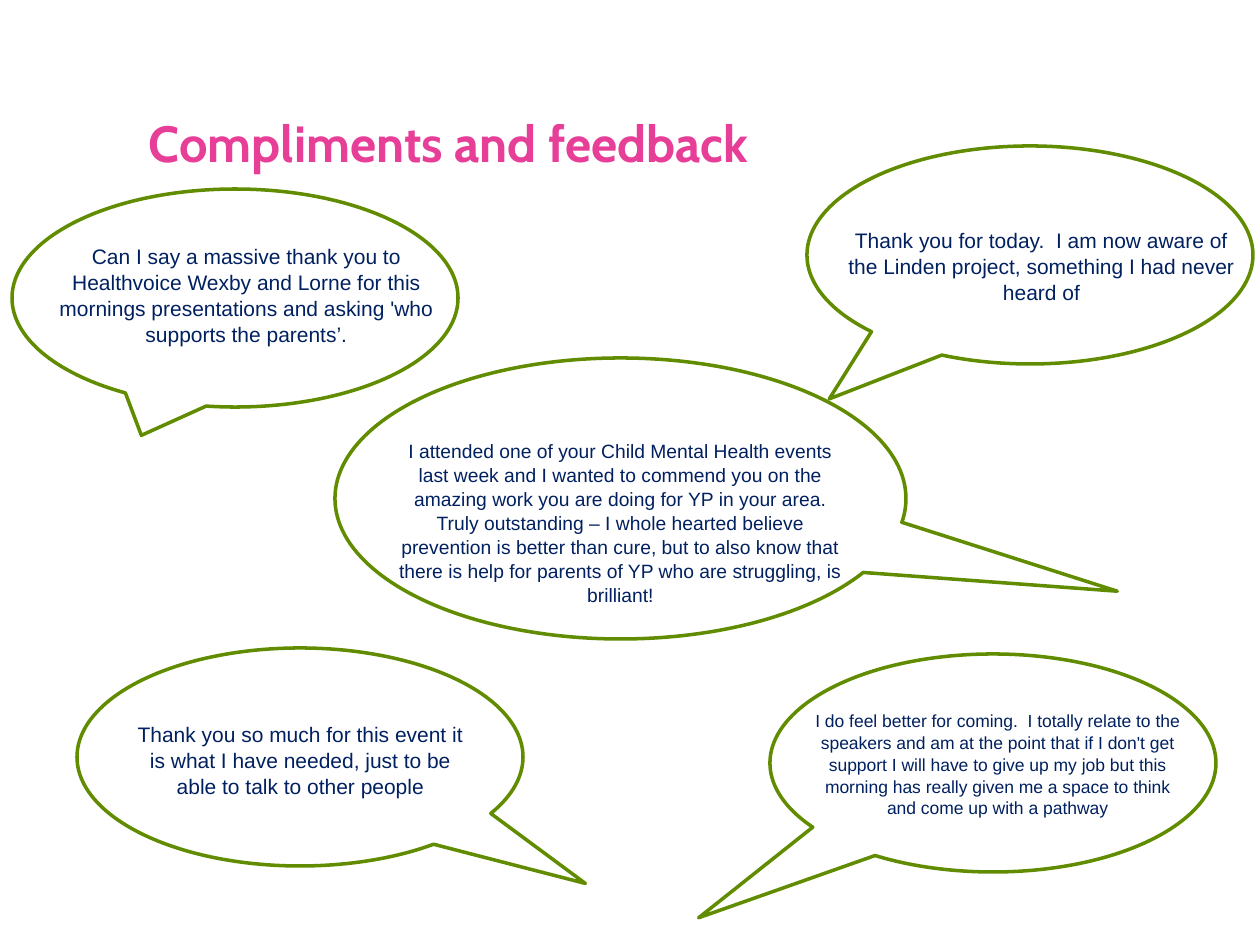
from pptx import Presentation
from pptx import util as u
from pptx.dml.color import RGBColor
from pptx.enum import shapes, text

SCALE = u.Inches(1) / 126
GREEN, NAVY, PINK = "628C00", "002060", "E73E97"
SMALL = (446, 218)
LARGE = (571, 281)

# Each entry: bubble corner, bubble size, pointer, text area, font size, words
BUBBLES = [
    ((77, 648), SMALL, (0.64, 0.58), (117, 714, 367, 127), 12,
     "Thank you so much for this event it is what I have needed, "
     "just to be able to talk to other people"),
    ((770, 654), SMALL, (-0.66, 0.71), (802, 703, 391, 118), 10,
     "I do feel better for coming.  I totally relate to the speakers and am at "
     "the point that if I don't get support I will have to give up my job but "
     "this morning has really given me a space to think and come up with a pathway"),
    ((12, 189), SMALL, (-0.21, 0.63), (34, 236, 425, 115), 12,
     "Can I say a massive thank you to Healthvoice Wexby and Lorne for this "
     "mornings presentations and asking 'who supports the parents’."),
    ((335, 358), LARGE, (0.87, 0.33), (380, 432, 481, 176), 11,
     "I attended one of your Child Mental Health events last week and I wanted "
     "to commend you on the amazing work you are doing for YP in your area. "
     "Truly outstanding – I whole hearted believe prevention is better than cure, "
     "but to also know that there is help for parents of YP who are struggling, "
     "is brilliant!"),
    ((807, 146), SMALL, (-0.45, 0.66), (830, 220, 423, 89), 12,
     "Thank you for today.  I am now aware of the Linden project, "
     "something I had never heard of"),
]


def px(*lengths):
    """Turn pixel lengths into EMU."""
    return [round(length * SCALE) for length in lengths]


def color(code):
    """Turn a hex string into a colour."""
    return RGBColor.from_string(code)


def add_text(page, area, words, font, size, code):
    """Add a wrapped text box with one styled paragraph and return it."""
    box = page.shapes.add_textbox(*px(*area))
    box.text_frame.word_wrap = True
    box.text_frame.text = words
    span = box.text_frame.paragraphs[0].runs[0]
    span.font.name = font
    span.font.size = u.Pt(size)
    span.font.color.rgb = color(code)
    return box


def add_title(page):
    """Add the bold slide heading."""
    box = add_text(page, (149, 112, 994, 69), "Compliments and feedback", "Cabin", 29, PINK)
    frame = box.text_frame
    frame.margin_left = frame.margin_right = frame.margin_top = frame.margin_bottom = 0
    frame.paragraphs[0].runs[0].font.bold = True


def add_bubble(page, corner, extent, pointer, area, size, words):
    """Add an outlined speech bubble and the quote over it."""
    bubble = page.shapes.add_shape(
        shapes.MSO_SHAPE.OVAL_CALLOUT, *px(*corner, *extent))
    bubble.adjustments[0], bubble.adjustments[1] = pointer
    bubble.shadow.inherit = False
    bubble.fill.background()
    bubble.line.color.rgb = color(GREEN)
    bubble.line.width = u.Pt(2)
    quote = add_text(page, area, words, "Arial", size, NAVY)
    para = quote.text_frame.paragraphs[0]
    para.alignment = text.PP_ALIGN.CENTER
    para.line_spacing = 1.04


def main():
    """Build the feedback slide and save it."""
    deck = Presentation()
    deck.slide_width, deck.slide_height = px(1260, 945)
    page = deck.slides.add_slide(deck.slide_layouts[6])
    add_title(page)
    for bubble in BUBBLES:
        add_bubble(page, *bubble)
    deck.save("out.pptx")


if __name__ == "__main__":
    main()
